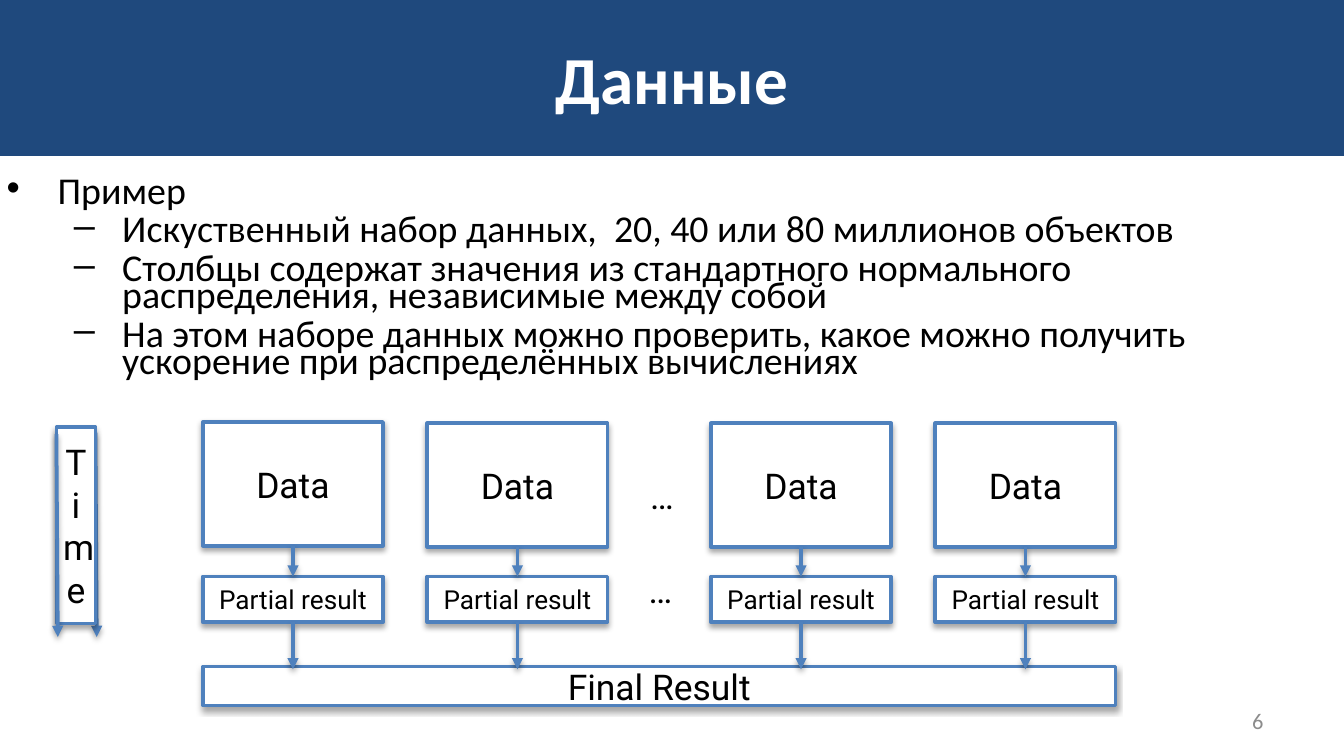
from pptx import Presentation
from pptx.util import Inches, Pt
from pptx.dml.color import RGBColor
from pptx.enum.shapes import MSO_SHAPE as Shape, MSO_CONNECTOR as Link
from pptx.enum.text import PP_ALIGN as Align, MSO_ANCHOR as Anchor
from pptx.oxml import parse_xml
from pptx.oxml.ns import nsdecls, qn
from lxml.etree import SubElement

# Content
TITLE = "Данные"
POINTS = [
    (0, "Пример"),
    (1, "Искуственный набор данных,  20, 40 или 80 миллионов объектов"),
    (1, "Столбцы содержат значения из стандартного нормального "
        "распределения, независимые между собой"),
    (1, "На этом наборе данных можно проверить, какое можно получить "
        "ускорение при распределённых вычислениях"),
]
LEVELS = [("•", 0.38, -0.38), ("–", 0.86, -0.36)]  # mark, margin, indent
COLUMNS = [(1.51, 3.14), (3.18, 3.15), (5.29, 3.15), (6.96, 3.15)]
DOTS = [(4.74, 3.48), (4.73, 4.18)]
PAGE = "6"

# Look
NAVY = RGBColor(0x1F, 0x49, 0x7D)
BLUE = RGBColor(0x4F, 0x81, 0xBD)
WHITE = RGBColor(0xFF, 0xFF, 0xFF)
BLACK = RGBColor(0, 0, 0)
GRAY = RGBColor(0x8C, 0x8C, 0x8C)
WIDE, DATA_H, PART_H = 1.34, 0.92, 0.34
PART_TOP, FINAL_TOP = 4.29, 4.96

# Widescreen slide, 16 to 9
deck = Presentation()
deck.slide_width, deck.slide_height = Inches(10), Inches(10 * 9 / 16)
slide = deck.slides.add_slide(deck.slide_layouts[6])
shapes = slide.shapes


def shade(part):
    part._element.spPr.append(parse_xml(
        f'<a:effectLst {nsdecls("a")}><a:outerShdw blurRad="{Pt(3)}" '
        f'dist="{Pt(1.8)}" dir="5400000" rotWithShape="0">'
        '<a:srgbClr val="000000"><a:alpha val="35000"/></a:srgbClr>'
        '</a:outerShdw></a:effectLst>'))


def set_frame(part, anchor=Anchor.TOP, wrap=True):
    frame = part.text_frame
    frame.word_wrap, frame.vertical_anchor = wrap, anchor
    frame.margin_left = frame.margin_right = Inches(0.05)
    frame.margin_top = frame.margin_bottom = Inches(0.05)
    return frame


def write(para, text, size, font="Roboto", color=BLACK, bold=False,
          align=Align.CENTER):
    para.alignment = align
    run = para.add_run()
    run.text = text
    run.font.size, run.font.name, run.font.bold = Pt(size), font, bold
    run.font.color.rgb = color


def add_rect(x, y, w, h, fill):
    rect = shapes.add_shape(Shape.RECTANGLE, *map(Inches, (x, y, w, h)))
    rect.fill.solid()
    rect.fill.fore_color.rgb = fill
    return rect


def add_box(x, y, w, h, text, size=19):
    box = add_rect(x, y, w, h, WHITE)
    box.line.color.rgb, box.line.width = BLUE, Pt(2)
    shade(box)
    write(set_frame(box, Anchor.MIDDLE).paragraphs[0], text, size)


def add_text(x, y, w, h, **frame):
    box = shapes.add_textbox(*map(Inches, (x, y, w, h)))
    return set_frame(box, **frame)


def add_arrow(x1, y1, x2, y2):
    arrow = shapes.add_connector(Link.STRAIGHT, *map(Inches, (x1, y1, x2, y2)))
    arrow.line.color.rgb, arrow.line.width = BLUE, Pt(2)
    tail = SubElement(arrow._element.spPr.find(qn("a:ln")), qn("a:tailEnd"))
    tail.set("type", "triangle")
    shade(arrow)


# Title band
band = add_rect(0, 0, 10, 1.16, NAVY)
band.line.fill.background()
band.shadow.inherit = False
write(set_frame(band, Anchor.MIDDLE).paragraphs[0], TITLE, 36, "Calibri",
      WHITE, True)

# Bullet list
body = add_text(0, 1.31, 9.86, 1.63)
for i, (level, text) in enumerate(POINTS):
    para = body.add_paragraph() if i else body.paragraphs[0]
    mark, margin, indent = LEVELS[level]
    para.level, para.line_spacing, para.space_before = level, 0.6, Pt(6)
    write(para, text, 20.3, "Calibri", align=Align.LEFT)
    props = para._p.get_or_add_pPr()
    props.set("marL", str(Inches(margin)))
    props.set("indent", str(Inches(indent)))
    props.append(parse_xml(f'<a:buFont {nsdecls("a")} typeface="Arial"/>'))
    props.append(parse_xml(f'<a:buChar {nsdecls("a")} char="{mark}"/>'))

# Data columns
for x, top in COLUMNS:
    add_box(x, top, WIDE, DATA_H, "Data")
    add_box(x, PART_TOP, WIDE, PART_H, "Partial result", 14)
    add_arrow(x + WIDE / 2, top + DATA_H, x + WIDE / 2, PART_TOP)

# Time bar between two arrows
add_arrow(0.71, 3.22, 0.72, 4.74)
add_box(0.42, 3.18, 0.29, 1.46, "Time")

# Dots for the columns left out
for x, y in DOTS:
    write(add_text(x, y, 0.37, 0.42, wrap=False).paragraphs[0], "…", 19)

# Final result
left, right = COLUMNS[0][0], COLUMNS[-1][0] + WIDE
add_box(left, FINAL_TOP, right - left, 0.29, "Final Result")
for x, top in COLUMNS:
    add_arrow(x + WIDE / 2, PART_TOP + PART_H, x + WIDE / 2, FINAL_TOP + 0.02)
add_arrow(0.42, 3.23, 0.43, 4.74)

# Page number
page = add_text(7.17, 5.21, 2.33, 0.3, anchor=Anchor.MIDDLE)
page.margin_right = Inches(0.1)
write(page.paragraphs[0], PAGE, 12, "Calibri", GRAY, align=Align.RIGHT)

deck.save("out.pptx")
